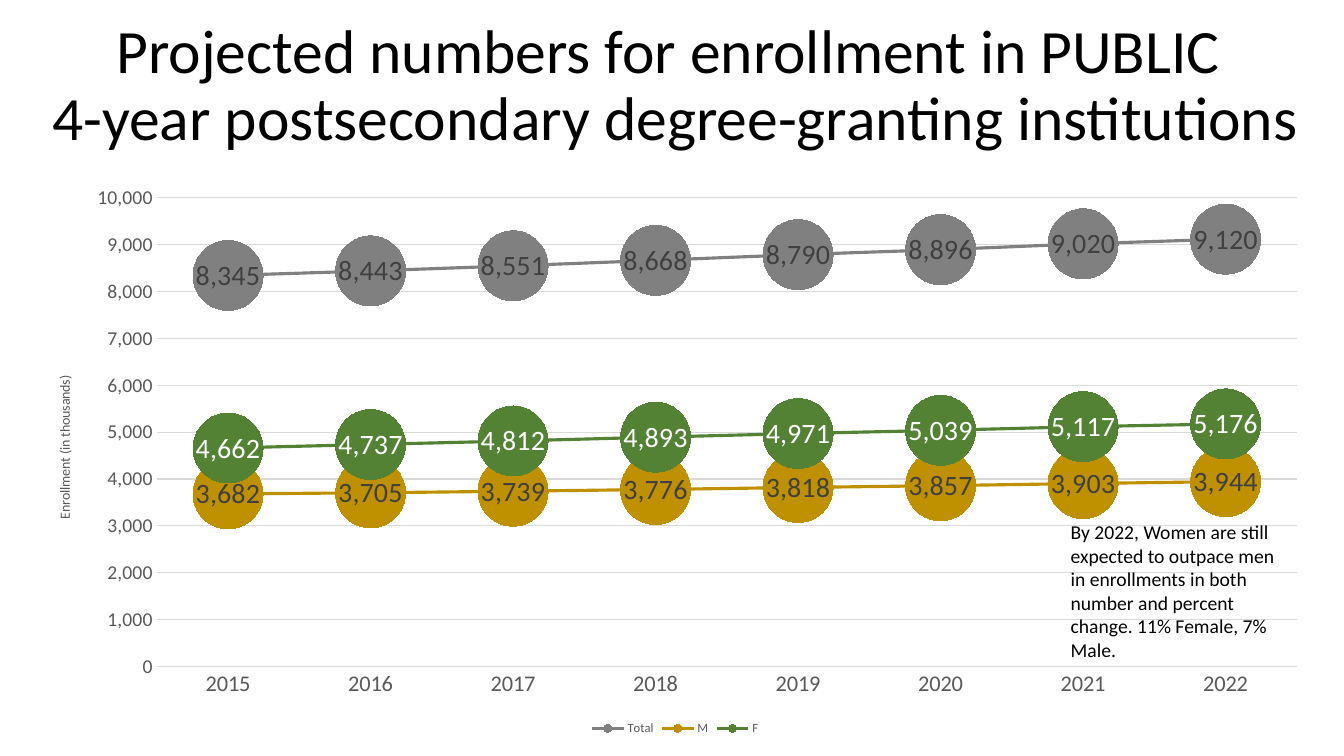
import lxml.etree
import pptx
import pptx.chart.data
import pptx.dml.color
import pptx.enum.chart
import pptx.enum.text
import pptx.oxml
import pptx.oxml.ns
import pptx.util

RGBColor = pptx.dml.color.RGBColor
BLACK = RGBColor(0x00, 0x00, 0x00)
WHITE = RGBColor(0xFF, 0xFF, 0xFF)
DARK_GRAY = RGBColor(0x40, 0x40, 0x40)
TEXT_GRAY = RGBColor(0x59, 0x59, 0x59)
GRID_GRAY = RGBColor(0xD9, 0xD9, 0xD9)
TOTAL_GRAY = RGBColor(0x80, 0x80, 0x80)
MARKER_GRAY = RGBColor(0xA6, 0xA6, 0xA6)
GOLD = RGBColor(0xBF, 0x90, 0x00)
GREEN = RGBColor(0x54, 0x82, 0x35)

YEARS = [str(year) for year in range(2015, 2023)]
ENROLLMENT = [
    ("Total", [8345, 8443, 8551, 8668, 8790, 8896, 9020, 9120], TOTAL_GRAY, MARKER_GRAY, DARK_GRAY),
    ("M", [3682, 3705, 3739, 3776, 3818, 3857, 3903, 3944], GOLD, GOLD, DARK_GRAY),
    ("F", [4662, 4737, 4812, 4893, 4971, 5039, 5117, 5176], GREEN, GREEN, WHITE),
]


class SlideBuilder:
    font_name = "Calibri"
    scale = 9144

    def __init__(self, presentation):
        presentation.slide_width = self.px(1333)
        presentation.slide_height = self.px(750)
        self.slide = presentation.slides.add_slide(presentation.slide_layouts[6])

    def px(self, length):
        return pptx.util.Emu(length * self.scale)

    def box(self, *lengths):
        return [self.px(length) for length in lengths]

    def style(self, font, size, color):
        font.name = self.font_name
        font.size = pptx.util.Pt(size)
        font.bold = False
        font.color.rgb = color

    def text(self, bounds, lines, size, align, anchor, spacing):
        frame = self.slide.shapes.add_textbox(*self.box(*bounds)).text_frame
        frame.word_wrap = True
        frame.vertical_anchor = anchor
        paragraph = frame.paragraphs[0]
        paragraph.alignment = align
        paragraph.line_spacing = spacing
        for index, line in enumerate(lines):
            if index:
                paragraph.add_line_break()
            run = paragraph.add_run()
            run.text = line
            self.style(run.font, size, BLACK)

    def layout(self, parent, before, **fractions):
        for existing in parent.findall(pptx.oxml.ns.qn("c:layout")):
            parent.remove(existing)
        layout = pptx.oxml.parse_xml(f'<c:layout {pptx.oxml.ns.nsdecls("c")}><c:manualLayout/></c:layout>')
        settings = {"xMode": "edge", "yMode": "edge", **fractions}
        if "w" in fractions:
            settings = {"layoutTarget": "inner", **settings}
        for name, value in settings.items():
            lxml.etree.SubElement(layout[0], pptx.oxml.ns.qn(f"c:{name}")).set("val", str(value))
        parent.find(pptx.oxml.ns.qn(before)).addprevious(layout)

    def line(self, line_format, color, width):
        line_format.color.rgb = color
        line_format.width = pptx.util.Pt(width)

    def series(self, series, color, marker_color, label_color):
        series.smooth = False
        self.line(series.format.line, color, 2.25)
        series.marker.style = pptx.enum.chart.XL_MARKER_STYLE.CIRCLE
        series.marker.size = 50
        series.marker.format.fill.solid()
        series.marker.format.fill.fore_color.rgb = marker_color
        series.marker.format.line.color.rgb = marker_color
        labels = series.data_labels
        labels.show_value = True
        labels.position = pptx.enum.chart.XL_LABEL_POSITION.CENTER
        self.style(labels.font, 20, label_color)

    def axes(self, chart, axis_title):
        category_axis, value_axis = chart.category_axis, chart.value_axis
        for axis, size in ((category_axis, 16), (value_axis, 14)):
            axis.major_tick_mark = pptx.enum.chart.XL_TICK_MARK.NONE
            axis.minor_tick_mark = pptx.enum.chart.XL_TICK_MARK.NONE
            self.style(axis.tick_labels.font, size, TEXT_GRAY)
        self.line(category_axis.format.line, GRID_GRAY, 0.75)
        value_axis.format.line.fill.background()
        value_axis.has_major_gridlines = True
        self.line(value_axis.major_gridlines.format.line, GRID_GRAY, 0.75)
        value_axis.minimum_scale, value_axis.maximum_scale = 0, 10000
        value_axis.major_unit = 1000
        value_axis.tick_labels.number_format = "#,##0"
        value_axis.tick_labels.number_format_is_linked = False
        title = value_axis.axis_title
        run = title.text_frame.paragraphs[0].add_run()
        run.text = axis_title
        self.style(run.font, 10, TEXT_GRAY)
        self.layout(title._element, "c:overlay", x=0.02, y=0.35)

    def line_chart(self, bounds, categories, rows, axis_title):
        data = pptx.chart.data.CategoryChartData(number_format="#,##0")
        data.categories = categories
        for name, values, *_ in rows:
            data.add_series(name, values)
        chart_type = pptx.enum.chart.XL_CHART_TYPE.LINE_MARKERS
        chart = self.slide.shapes.add_chart(chart_type, *self.box(*bounds), data).chart
        chart.has_title = False
        self.style(chart.font, 10, BLACK)
        chart.plots[0].vary_by_categories = False
        for series, (_, _, *colors) in zip(chart.plots[0].series, rows):
            self.series(series, *colors)
        self.axes(chart, axis_title)
        chart.has_legend = True
        chart.legend.position = pptx.enum.chart.XL_LEGEND_POSITION.BOTTOM
        chart.legend.include_in_layout = False
        self.style(chart.legend.font, 9, TEXT_GRAY)
        plot_area = chart._chartSpace.chart.plotArea
        self.layout(plot_area, "c:lineChart", x=0.1, y=0.04, w=0.88, h=0.83)


def main():
    presentation = pptx.Presentation()
    builder = SlideBuilder(presentation)
    align, anchor = pptx.enum.text.PP_ALIGN, pptx.enum.text.MSO_ANCHOR
    builder.text(
        (28, 14, 1285, 145),
        ["Projected numbers for enrollment in PUBLIC ", "4-year postsecondary degree-granting institutions"],
        44, align.CENTER, anchor.MIDDLE, 0.9,
    )
    builder.line_chart((27, 174, 1285, 560), YEARS, ENROLLMENT, "Enrollment (in thousands)")
    builder.text(
        (1052, 511, 225, 151),
        ["By 2022, Women are still expected to outpace men in enrollments in both number and percent change. "
         "11% Female, 7% Male."],
        14, align.LEFT, anchor.TOP, 1.0,
    )
    presentation.save("out.pptx")


if __name__ == "__main__":
    main()
